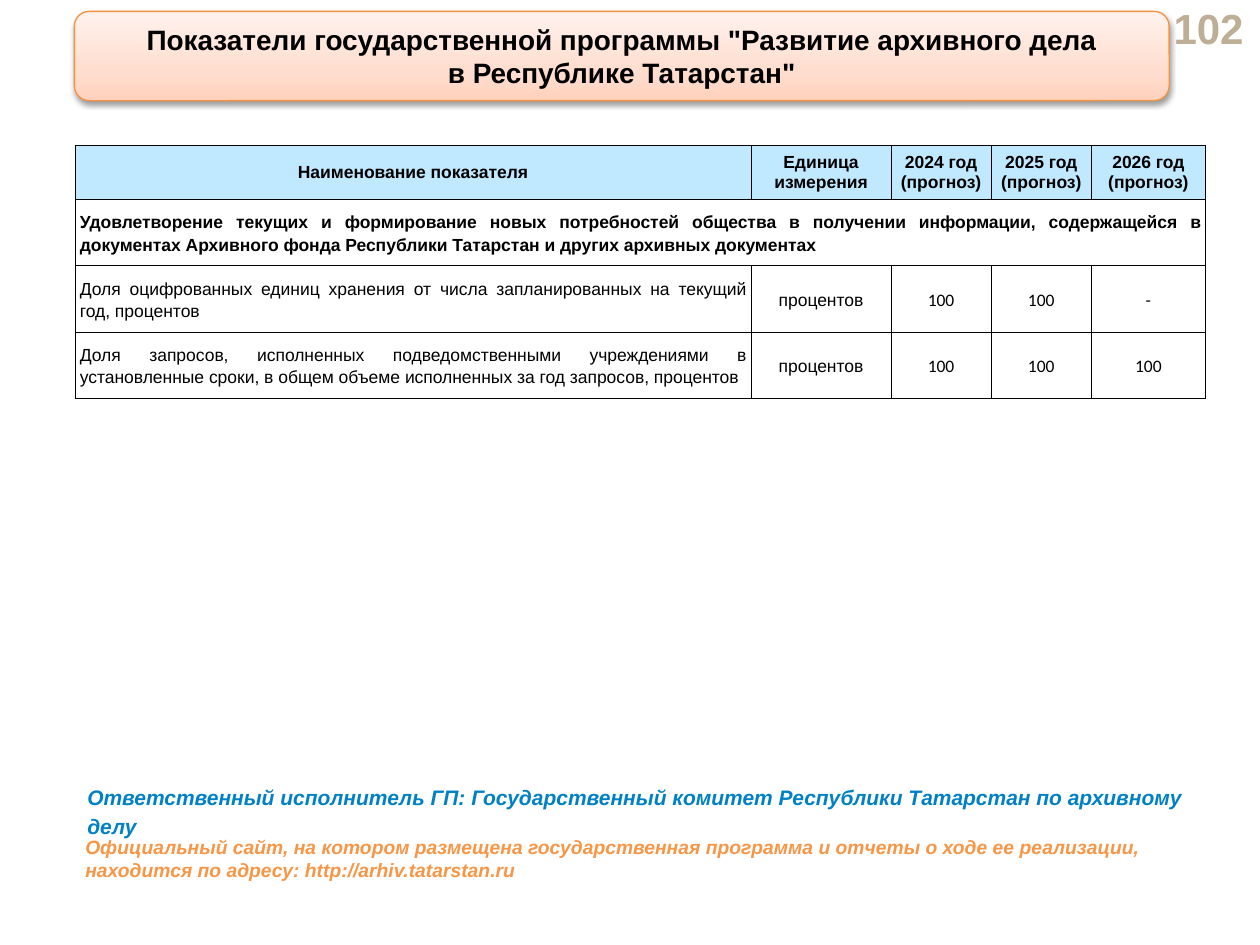
from lxml import etree
from pptx import Presentation
from pptx import util as u
from pptx.dml.color import RGBColor
from pptx.enum import shapes, text
from pptx.oxml import parse_xml
from pptx.oxml.ns import nsdecls, qn

COLORS = {
    "black": "000000", "white": "FFFFFF", "header": "C0E9FF", "number": "BFAE96",
    "executor": "0081C5", "website": "F79646", "title_line": "F69240",
}
TITLE_STOPS = [(0, "FFD2BD"), (35, "FFDED0"), (100, "FFF2ED")]
LEFT, CENTER = text.PP_ALIGN.LEFT, text.PP_ALIGN.CENTER
RIGHT, JUSTIFY = text.PP_ALIGN.RIGHT, text.PP_ALIGN.JUSTIFY


def write(frame, content, size, color="black", font="Arial", bold=True, italic=False,
          align=LEFT, spacing=None):
    """Fill a text frame and give all its paragraphs one format."""
    frame.word_wrap = True
    frame.text = content
    for paragraph in frame.paragraphs:
        paragraph.alignment = align
        paragraph.line_spacing = spacing
        for run in paragraph.runs:
            run.font.name = font
            run.font.size = u.Pt(size)
            run.font.bold, run.font.italic = bold, italic
            run.font.color.rgb = RGBColor.from_string(COLORS[color])


def add_borders(cell):
    properties = cell._tc.get_or_add_tcPr()
    for position, side in enumerate(("lnL", "lnR", "lnT", "lnB")):
        properties.insert(position, parse_xml(
            f'<a:{side} {nsdecls("a")} w="{u.Pt(0.25)}"><a:solidFill>'
            f'<a:srgbClr val="{COLORS["black"]}"/></a:solidFill></a:{side}>'))


presentation = Presentation()
presentation.slide_width, presentation.slide_height = u.Cm(25.4), u.Cm(19.05)
slide = presentation.slides.add_slide(presentation.slide_layouts[6])

# Page number
number = slide.shapes.add_textbox(u.Cm(23.14), u.Cm(0.13), u.Cm(2.18), u.Cm(0.86))
write(number.text_frame, "102", 24, "number", align=RIGHT)
number.text_frame.vertical_anchor = text.MSO_ANCHOR.MIDDLE

# Indicator table
HEADERS = ["Наименование показателя", "Единица измерения",
           "2024 год (прогноз)", "2025 год (прогноз)", "2026 год (прогноз)"]
GOAL = ("Удовлетворение текущих и формирование новых потребностей общества в получении "
        "информации, содержащейся в документах Архивного фонда Республики Татарстан "
        "и других архивных документах")
INDICATORS = [
    ["Доля оцифрованных единиц хранения от числа запланированных на текущий год, процентов",
     "процентов", "100", "100", "-"],
    ["Доля запросов, исполненных подведомственными учреждениями в установленные сроки, "
     "в общем объеме исполненных за год запросов, процентов",
     "процентов", "100", "100", "100"],
]
rows = [HEADERS, [GOAL, "", "", "", ""], *INDICATORS]
widths = [13.63, 2.82, 2.02, 2.02, 2.3]
heights = [1.09, 1.33, 1.33, 1.33]
table = slide.shapes.add_table(len(rows), len(widths), u.Cm(1.51), u.Cm(2.93),
                               u.Cm(sum(widths)), u.Cm(sum(heights))).table
for column, width in zip(table.columns, widths):
    column.width = u.Cm(width)
for row, height in zip(table.rows, heights):
    row.height = u.Cm(height)
table.cell(1, 0).merge(table.cell(1, 4))

for r, values in enumerate(rows):
    for c, value in enumerate(values):
        cell = table.cell(r, c)
        is_header = r == 0
        cell.fill.solid()
        cell.fill.fore_color.rgb = RGBColor.from_string(
            COLORS["header" if is_header else "white"])
        cell.vertical_anchor = text.MSO_ANCHOR.MIDDLE
        cell.margin_left = cell.margin_right = u.Cm(0.1)
        cell.margin_top = cell.margin_bottom = u.Cm(0 if is_header else 0.18)
        add_borders(cell)
        if value:
            write(cell.text_frame, value, 10, bold=r < 2,
                  font="Calibri" if r > 1 and c > 1 else "Arial",
                  align=JUSTIFY if r > 0 and c == 0 else CENTER,
                  spacing=None if is_header else 1.15)

# Title plate
title = slide.shapes.add_shape(shapes.MSO_SHAPE.ROUNDED_RECTANGLE,
                               u.Cm(1.5), u.Cm(0.23), u.Cm(22.07), u.Cm(1.8))
title.fill.gradient()
title.fill.gradient_angle = 90
stops = title._element.spPr.find(qn("a:gradFill")).find(qn("a:gsLst"))
for stop in list(stops):
    stops.remove(stop)
for position, color in TITLE_STOPS:
    stop = etree.SubElement(stops, qn("a:gs"), pos=str(position * 1000))
    etree.SubElement(stop, qn("a:srgbClr"), val=color)
title.line.color.rgb = RGBColor.from_string(COLORS["title_line"])
title.line.width = u.Pt(0.75)
title.shadow.inherit = False
title._element.spPr.find(qn("a:effectLst")).append(parse_xml(
    f'<a:outerShdw {nsdecls("a")} blurRad="{u.Pt(3.1)}" dist="{u.Pt(1.6)}" '
    f'dir="5400000" rotWithShape="0"><a:srgbClr val="{COLORS["black"]}">'
    '<a:alpha val="38000"/></a:srgbClr></a:outerShdw>'))
write(title.text_frame, 'Показатели государственной программы "Развитие архивного дела\n'
      'в Республике Татарстан"', 16, align=CENTER)
title.text_frame.vertical_anchor = text.MSO_ANCHOR.MIDDLE

# Footer
executor = slide.shapes.add_textbox(u.Cm(1.51), u.Cm(15.62), u.Cm(23.55), u.Cm(1.37))
write(executor.text_frame, "Ответственный исполнитель ГП: Государственный комитет "
      "Республики Татарстан по архивному делу", 12, "executor", italic=True, spacing=1.15)
website = slide.shapes.add_textbox(u.Cm(1.47), u.Cm(16.71), u.Cm(21.82), u.Cm(1.09))
write(website.text_frame, "Официальный сайт, на котором размещена государственная программа "
      "и отчеты о ходе ее реализации, находится по адресу: http://arhiv.tatarstan.ru",
      11, "website", italic=True)

presentation.save("out.pptx")
